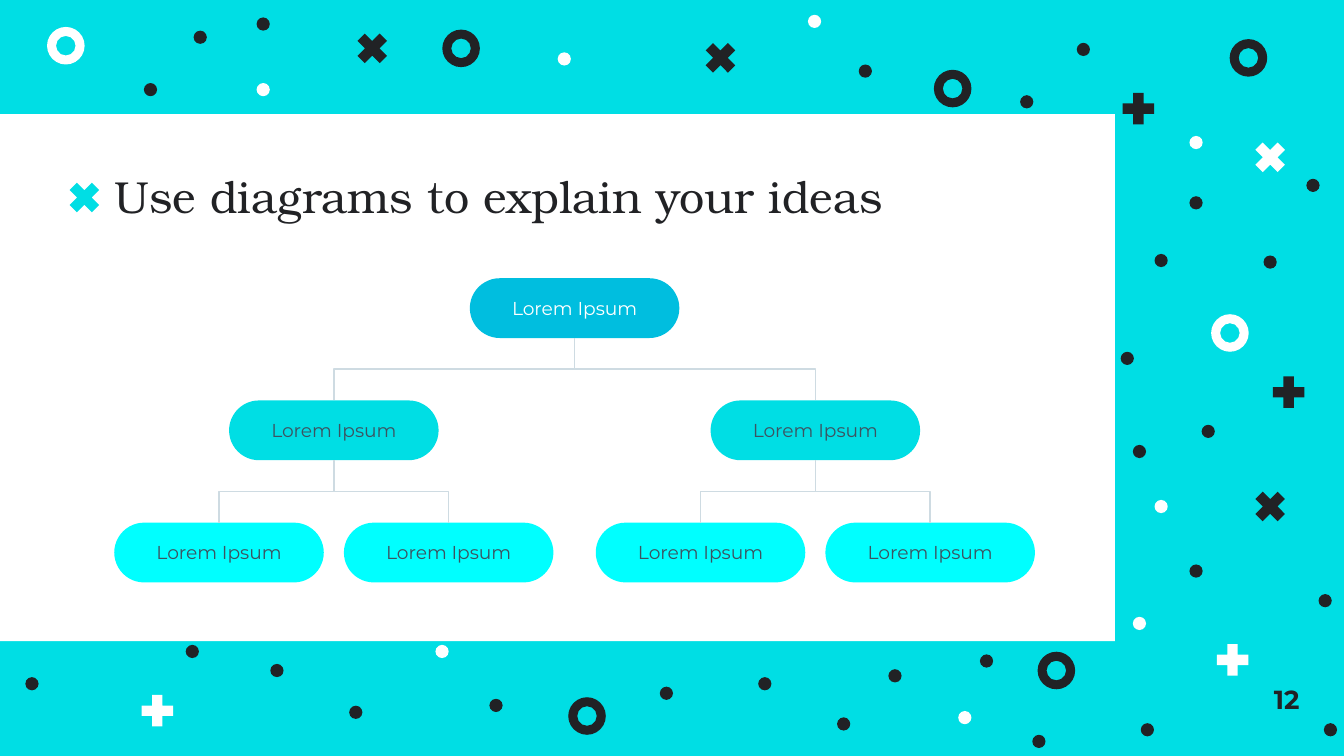
from lxml import etree
from pptx import Presentation
from pptx import util as u
from pptx.dml.color import RGBColor
from pptx.enum import shapes, text
from pptx.oxml.ns import qn

Cm, Pt = u.Cm, u.Pt
kind = shapes.MSO_SHAPE
hues = {"back": "00DEE4", "dark": "212225", "white": "FFFFFF", "top": "00BEDF",
        "mid": "00DEE4", "low": "00FFFF", "slate": "3C5361", "wire": "CEDBE2"}
hue = {name: RGBColor.from_string(code) for name, code in hues.items()}

deck = Presentation()
deck.slide_width, deck.slide_height = Cm(25.4), Cm(14.29)
slide = deck.slides.add_slide(deck.slide_layouts[5])
slide.background.fill.solid()
slide.background.fill.fore_color.rgb = hue["back"]


def draw(form, x, y, w, h, tint):
    item = slide.shapes.add_shape(form, Cm(x), Cm(y), Cm(w), Cm(h))
    item.shadow.inherit = False
    item.fill.solid()
    item.fill.fore_color.rgb = hue[tint]
    item.line.fill.background()
    return item


def write(item, words, tint, align, anchor, pad, fmt):
    frame = item.text_frame
    frame.word_wrap = True
    frame.auto_size = text.MSO_AUTO_SIZE.NONE
    frame.vertical_anchor = anchor
    for side in ("left", "top", "right", "bottom"):
        setattr(frame, f"margin_{side}", Cm(pad))
    frame.text = words
    para = frame.paragraphs[0]
    para.alignment = align
    font = para.runs[0].font
    font.color.rgb = hue[tint]
    for key, value in fmt.items():
        setattr(font, key, value)


# Scattered marks: preset, size, adjustment, turn
marks = {
    "dot": (kind.OVAL, 0.25, None, 0),
    "ring": (kind.DONUT, 0.71, 0.24, 0),
    "plus": (kind.MATH_PLUS, 0.81, 0.24, 0),
    "cross": (kind.MATH_PLUS, 0.81, 0.24, 45),
}
spots = {
    ("dot", "dark"): [
        (4.85, 0.33), (3.66, 0.58), (2.72, 1.57), (16.23, 1.22), (19.28, 1.8),
        (20.35, 0.81), (24.69, 3.38), (22.48, 3.71), (21.82, 4.8), (23.88, 4.83),
        (21.18, 6.65), (22.71, 8.03), (21.41, 8.41), (22.48, 10.67), (24.92, 11.23),
        (3.51, 12.19), (18.52, 12.37), (5.11, 12.55), (16.79, 12.65), (0.48, 12.8),
        (14.33, 12.8), (12.47, 12.98), (9.25, 13.21), (6.6, 13.34), (15.82, 13.56),
        (21.56, 13.67), (25.02, 13.67), (19.51, 13.89)],
    ("dot", "white"): [
        (15.27, 0.28), (10.54, 0.99), (4.85, 1.57), (22.48, 2.57), (21.82, 9.45),
        (21.41, 11.66), (8.23, 12.19), (18.11, 13.44)],
    ("ring", "dark"): [
        (8.36, 0.56), (23.24, 0.74), (17.65, 1.32), (19.61, 12.32), (10.74, 13.18)],
    ("ring", "white"): [(0.89, 0.51), (22.89, 5.94)],
    ("plus", "dark"): [(21.11, 1.65), (23.95, 7.01)],
    ("plus", "white"): [(22.89, 12.07), (2.57, 13.03)],
    ("cross", "dark"): [(6.63, 0.51), (13.21, 0.69), (23.6, 9.17)],
    ("cross", "white"): [(23.6, 2.57)],
    ("panel", "white"): [(0, 2.16)],
    ("cross", "back"): [(1.19, 3.33)],
}
for (name, tint), places in spots.items():
    for x, y in places:
        if name == "panel":
            draw(kind.RECTANGLE, x, y, 21.07, 9.96, tint)
            continue
        form, size, adj, turn = marks[name]
        mark = draw(form, x, y, size, size, tint)
        mark.rotation = turn
        if adj:
            mark.adjustments[0] = adj

# Title, brought in front of the panel
title = slide.shapes.title
slide.shapes._spTree.append(title._element)
spot = {"left": 2.16, "top": 3.2, "width": 16.74, "height": 1.02}
for key, value in spot.items():
    setattr(title, key, Cm(value))
write(title, "Use diagrams to explain your ideas", "dark", text.PP_ALIGN.LEFT,
      text.MSO_ANCHOR.BOTTOM, 0, {"name": "TeX Gyre Bonum", "size": Pt(24)})
title.text_frame.paragraphs[0].line_spacing = 0.9

# Page number
page = slide.shapes.add_textbox(Cm(23.24), Cm(12.13), Cm(2.16), Cm(2.16))
write(page, "12", "dark", text.PP_ALIGN.CENTER, text.MSO_ANCHOR.MIDDLE, 0,
      {"name": "Montserrat", "size": Pt(14), "bold": True})

# Tree of boxes: each level halves around its parent
wide, high, step = 3.96, 1.13, 2.31
levels = [("top", "white", [0]), ("mid", "slate", [-4.55, 4.55]),
          ("low", "slate", [-2.17, 2.17])]
row, pairs = [], []
for depth, (tint, ink, shifts) in enumerate(levels):
    heads = row or [(None, 8.88)]
    row = []
    for head, x in heads:
        for shift in shifts:
            box = draw(kind.ROUNDED_RECTANGLE, x + shift, 5.26 + depth * step,
                       wide, high, tint)
            box.adjustments[0] = 0.5
            write(box, "Lorem Ipsum", ink, text.PP_ALIGN.CENTER,
                  text.MSO_ANCHOR.MIDDLE, 0.25, {"name": "Montserrat", "size": Pt(10)})
            row.append((box, x + shift))
            if head is not None:
                pairs.append((head, box))

# Elbow lines, turned so that they leave downwards
for head, box in pairs:
    wire = slide.shapes.add_connector(shapes.MSO_CONNECTOR.ELBOW, 0, 0, 0, 0)
    wire.begin_connect(head, 2)
    wire.end_connect(box, 0)
    start = head.left + head.width // 2
    run = box.left + box.width // 2 - start
    low = head.top + head.height
    drop = box.top - low
    frame = {"left": start + (run - drop) // 2, "top": low + (drop - abs(run)) // 2,
             "width": drop, "height": abs(run)}
    for key, value in frame.items():
        setattr(wire, key, value)
    form = wire._element.spPr.find(qn("a:xfrm"))
    for key in ("flipH", "flipV"):
        form.attrib.pop(key, None)
    form.set("rot", str((270 if run > 0 else 90) * 60000))
    if run > 0:
        form.set("flipH", "1")
    wire.line.color.rgb = hue["wire"]
    wire.line.width = Pt(0.75)
    etree.SubElement(wire._element.spPr, qn("a:effectLst"))

deck.save("out.pptx")
